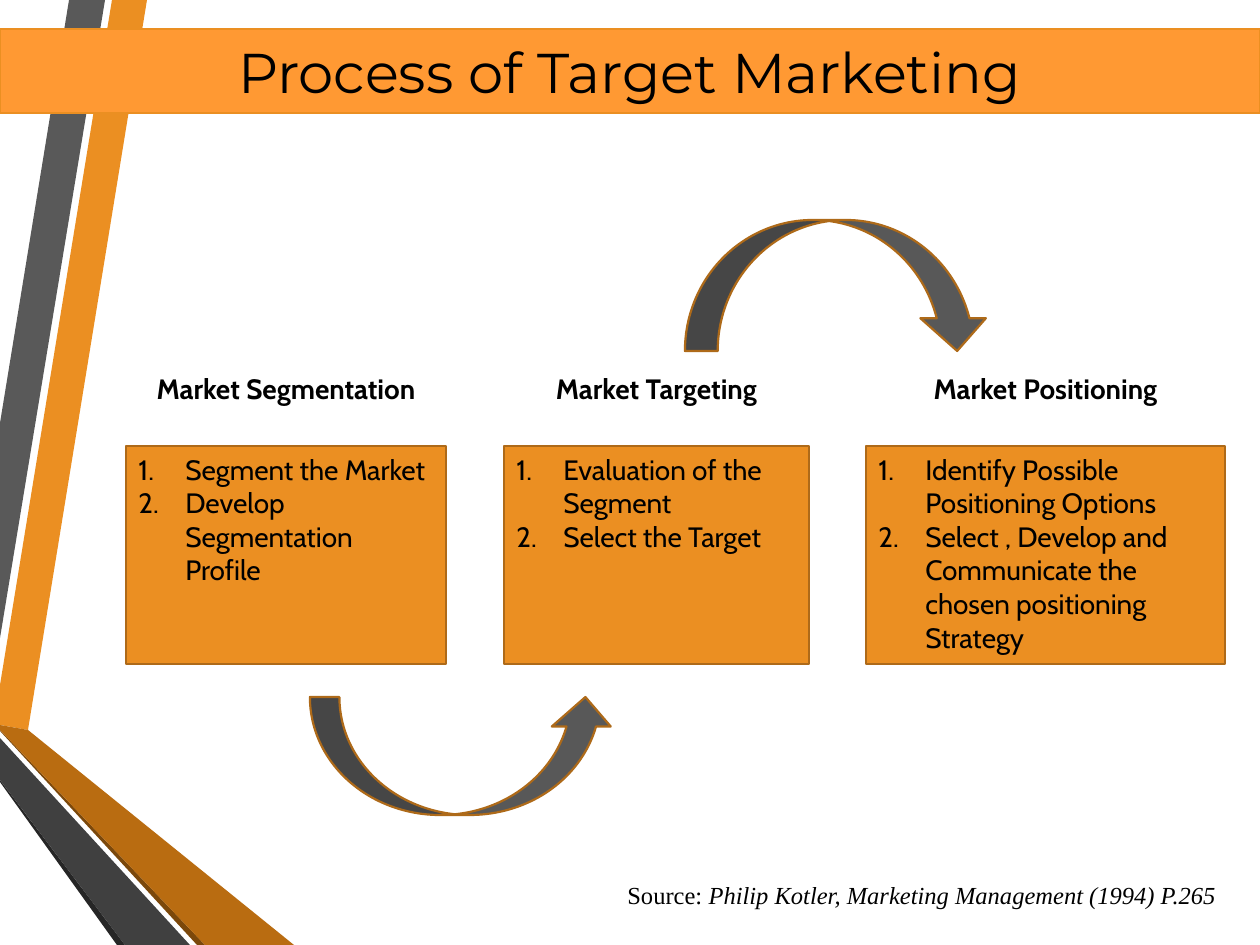
from pptx import Presentation
from pptx.dml.color import RGBColor
from pptx.enum.shapes import MSO_SHAPE as Shape
from pptx.enum.text import MSO_ANCHOR as Anchor, PP_ALIGN as Align
from pptx.oxml.ns import qn
from pptx.util import Pt
from lxml.etree import SubElement

EMU_PER_PX = 914400 / 126
SLIDE_W, SLIDE_H = 1260, 945
COLORS = {
    "orange": "EB8F22", "banner": "FF9933", "edge": "AE6A19",
    "rust": "B96C11", "brown": "7B480B", "grey": "595959",
    "arrow": "585858", "charcoal": "404040", "black": "262626", "text": "000000",
}
RIBBONS = [
    ("orange", [(0, 685), (0, 725), (28, 730), (147, 0), (112, 0)]),
    ("grey", [(105, 0), (69, 0), (0, 423), (0, 638)]),
    ("black", [(0, 780), (0, 782), (117, 945), (125, 945)]),
    ("brown", [(0, 730), (0, 731), (197, 945), (205, 945)]),
    ("rust", [(0, 730), (205, 945), (294, 945), (28, 730), (0, 725)]),
    ("charcoal", [(0, 780), (125, 945), (190, 945), (0, 738)]),
]
STAGES = [
    (126, 320, "Market Segmentation",
     ["Segment the Market", "Develop Segmentation Profile"]),
    (504, 305, "Market Targeting",
     ["Evaluation of the Segment", "Select the Target"]),
    (866, 359, "Market Positioning",
     ["Identify Possible Positioning Options",
      "Select , Develop and Communicate the chosen positioning Strategy"]),
]


def px(length):
    return round(length * EMU_PER_PX)


def rgb(name):
    return RGBColor.from_string(COLORS[name])


def paint(shape, fill, line=None, width=1.25):
    shape.shadow.inherit = False
    shape.fill.solid()
    shape.fill.fore_color.rgb = rgb(fill)
    if line:
        shape.line.color.rgb = rgb(line)
        shape.line.width = Pt(width)
    else:
        shape.line.fill.background()


def add_box(slide, kind, box, fill, line, width=1.25):
    shape = slide.shapes.add_shape(kind, *map(px, box))
    paint(shape, fill, line, width)
    return shape


def add_label(slide, box):
    frame = slide.shapes.add_textbox(*map(px, box)).text_frame
    frame.word_wrap = True
    return frame.paragraphs[0]


def style(paragraph, font, size, align, bold=False):
    paragraph.alignment = align
    paragraph.font.name = font
    paragraph.font.size = Pt(size)
    paragraph.font.bold = bold
    paragraph.font.color.rgb = rgb("text")


def number(paragraph, indent):
    properties = paragraph._p.get_or_add_pPr()
    properties.set("marL", str(px(indent)))
    properties.set("indent", str(-px(indent)))
    SubElement(properties, qn("a:buFont"), typeface="+mj-lt")
    SubElement(properties, qn("a:buAutoNum"), type="arabicPeriod")


def draw_ribbons(slide, left, top):
    for color, points in RIBBONS:
        corners = [(left + x, top + y) for x, y in points]
        builder = slide.shapes.build_freeform(*corners[0], scale=EMU_PER_PX)
        builder.add_line_segments(corners[1:], close=True)
        paint(builder.convert_to_shape(), color)


def draw_banner(slide, box, title):
    frame = add_box(slide, Shape.RECTANGLE, box, "banner", "orange", 0.75).text_frame
    frame.vertical_anchor = Anchor.MIDDLE
    frame.text = title
    style(frame.paragraphs[0], "Montserrat", 32, Align.CENTER)


def draw_stage(slide, left, top, width, heading, steps):
    label = add_label(slide, (left, top, width, 53))
    label.text = heading
    style(label, "Cabin", 16, Align.CENTER, bold=True)

    card = add_box(slide, Shape.RECTANGLE, (left, top + 81, width, 218), "orange", "edge")
    frame = card.text_frame
    frame.word_wrap = True
    frame.vertical_anchor = Anchor.TOP
    frame.text = "\n".join(steps)
    for step in frame.paragraphs:
        style(step, "Cabin", 16, Align.LEFT)
        number(step, 47)


def draw_arrow(slide, box, flipped=False):
    arrow = add_box(slide, Shape.CURVED_UP_ARROW, box, "arrow", "edge")
    if flipped:
        arrow._element.spPr.xfrm.set("flipV", "1")


def draw_source(slide, box):
    source = add_label(slide, box)
    style(source, "Times New Roman", 14, Align.JUSTIFY)
    source.add_run().text = "Source: "
    citation = source.add_run()
    citation.text = "Philip Kotler, Marketing Management (1994) P.265"
    citation.font.italic = True


def main():
    deck = Presentation()
    deck.slide_width, deck.slide_height = px(SLIDE_W), px(SLIDE_H)
    slide = deck.slides.add_slide(deck.slide_layouts[6])
    draw_ribbons(slide, 0, 0)
    draw_banner(slide, (0, 29, SLIDE_W, 84), "Process of Target Marketing")
    for left, width, heading, steps in STAGES:
        draw_stage(slide, left, 365, width, heading, steps)
    draw_arrow(slide, (310, 697, 305, 118))
    draw_arrow(slide, (685, 220, 305, 131), flipped=True)
    draw_source(slide, (615, 874, 630, 43))
    deck.save("out.pptx")


if __name__ == "__main__":
    main()
